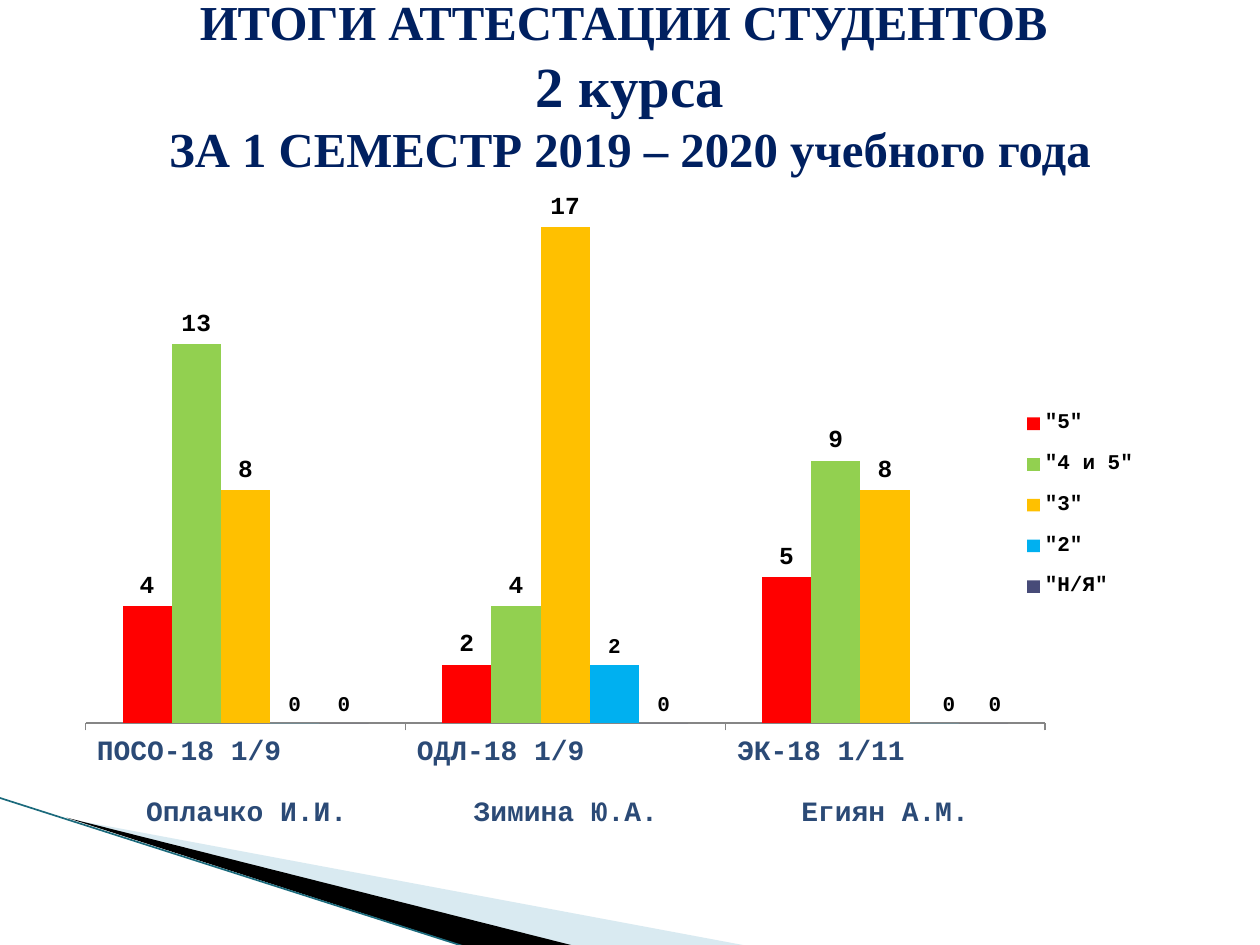
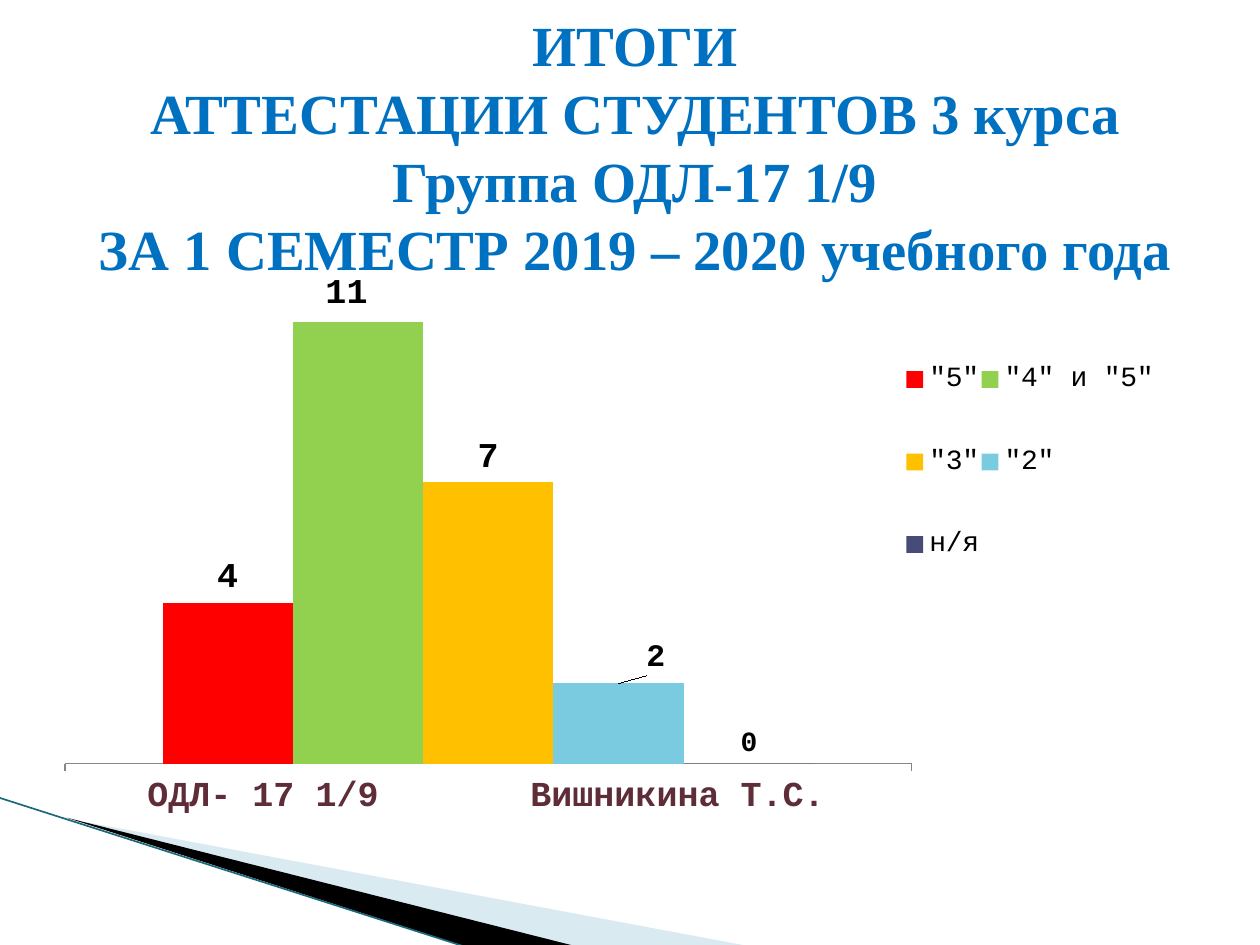
from lxml import etree
from pptx import Presentation
from pptx import util as u
from pptx.chart.data import CategoryChartData
from pptx.dml.color import RGBColor
from pptx.enum import chart as ch, shapes, text
from pptx.oxml.ns import qn

HUES = {
    "navy": "002060", "blue": "0070C0", "ink": "000000", "axis": "868686",
    "slate": "2B4A76", "wine": "5E2D37", "pale": "A0CBDC", "teal": "1B6A7C",
    "red": "FF0000", "green": "92D050", "gold": "FFC000", "sky": "00B0F0",
    "aqua": "7ACBE0", "plum": "474B78",
}
SERIF, MONO = "Times New Roman", "Courier New"

# Wedges in the lower left corner: colour, opacity in percent, corners
WEDGES = [
    ("pale", 40, [(0.55, 6.5), (5.95, 7.51), (4.56, 7.51)]),
    ("ink", 100, [(0.53, 6.49), (4.57, 7.51), (3.72, 7.52)]),
]

# series: name, values, colour, label size
# groups: code and teacher under each cluster
# spots: left and middle of the first code and of the first teacher
# nudge: series, point and label offset as shares of the chart
SLIDES = [
    dict(
        box=(0.5, 0, 9, 1.4), hue="navy",
        title=[("ИТОГИ АТТЕСТАЦИИ СТУДЕНТОВ ", 27.9), ("2 курса", 32.4),
               ("ЗА 1 СЕМЕСТР 2019 – 2020 учебного года", 27.9)],
        chart=(0.5, 1.47, 9, 5.2), top=18,
        plot=(0.02, 0.02, 0.846, 0.801), key=(0.837, 0.32, 0.12, 0.337),
        axis=(16, "slate"), legend=(12, True),
        groups=[("ПОСО-18 1/9", "Оплачко И.И."),
                ("ОДЛ-18 1/9", "Зимина Ю.А."),
                ("ЭК-18 1/11", "Егиян А.М.")],
        spots=[(0.77, 5.95), (1.16, 6.43)], steps=(2.54, 2.6),
        series=[('"5"', (4, 2, 5), "red", 14),
                ('"4 и 5"', (13, 4, 9), "green", 14),
                ('"3"', (8, 17, 8), "gold", 14),
                ('"2"', (0, 2, 0), "sky", 12),
                ('"Н/Я"', (0, 0, 0), "plum", 12)],
        nudge=[(3, 2, 0.013, 0), (4, 2, 0.01, 0)],
    ),
    dict(
        box=(0.59, 0.36, 8.9, 1.65), hue="blue",
        title=[("ИТОГИ", 32.4), ("АТТЕСТАЦИИ СТУДЕНТОВ 3 курса", 32.4),
               ("Группа ОДЛ-17 1/9", 32.4),
               ("ЗА 1 СЕМЕСТР 2019 – 2020 учебного года", 32.4)],
        chart=(0.51, 2.18, 8.99, 4.57), top=12.1,
        plot=(0, 0.001, 0.748, 0.848), key=(0.741, 0.061, 0.223, 0.523),
        axis=(20, "wine"), legend=(16, False),
        groups=[("ОДЛ- 17 1/9", "Вишникина Т.С.")],
        spots=[(1.17, 6.29), (4.21, 6.29)], steps=(0, 0),
        series=[('"5"', (4,), "red", 20),
                ('"4" и "5"', (11,), "green", 20),
                ('"3"', (7,), "gold", 20),
                ('"2"', (2,), "aqua", 18),
                ('н/я', (0,), "plum", 16)],
        nudge=[(1, 0, -0.01, -0.005), (3, 0, 0.033, -0.005)],
    ),
]


def style(font, size, hue="ink", bold=False, name=MONO):
    font.size, font.bold, font.name = u.Pt(size), bold, name
    font.color.rgb = RGBColor.from_string(HUES[hue])


def write(para, line, align=text.PP_ALIGN.CENTER, **form):
    """Put one line of text, formatted as style() takes it."""
    para.alignment = align
    para.space_before = u.Pt(0)
    run = para.add_run()
    run.text = line
    style(run.font, **form)


deck = Presentation()
deck.slide_width, deck.slide_height = u.Inches(10), u.Inches(7.5)

for page in SLIDES:
    slide = deck.slides.add_slide(deck.slide_layouts[5])

    # Corner band
    for hue, clear, spots in WEDGES:
        spots = [(u.Inches(x), u.Inches(y)) for x, y in spots]
        form = slide.shapes.build_freeform(*spots[0])
        form.add_line_segments(spots[1:], close=True)
        wedge = form.convert_to_shape()
        wedge.shadow.inherit = False
        wedge.line.fill.background()
        wedge.fill.solid()
        wedge.fill.fore_color.rgb = RGBColor.from_string(HUES[hue])
        if clear < 100:
            tint = wedge._element.spPr.find(".//" + qn("a:srgbClr"))
            etree.SubElement(tint, qn("a:alpha")).set("val", str(clear * 1000))
    edge = slide.shapes.add_connector(
        shapes.MSO_CONNECTOR.STRAIGHT,
        *[u.Inches(n) for n in (-0.01, 6.33, 3.71, 7.52)])
    edge.line.color.rgb = RGBColor.from_string(HUES["teal"])
    edge.line.width = u.Pt(0.95)
    etree.SubElement(edge._element.spPr, qn("a:effectLst"))

    # Title
    title = slide.shapes.title
    title.left, title.top, title.width, title.height = map(u.Inches, page["box"])
    frame = title.text_frame
    frame.word_wrap = True
    frame.auto_size = text.MSO_AUTO_SIZE.NONE
    frame.vertical_anchor = text.MSO_ANCHOR.MIDDLE
    frame.margin_left = frame.margin_right = u.Inches(0.05)
    frame.margin_bottom = u.Inches(0.11)
    for i, (line, size) in enumerate(page["title"]):
        para = frame.add_paragraph() if i else frame.paragraphs[0]
        write(para, line, size=size, hue=page["hue"], bold=True, name=SERIF)

    # Chart
    data = CategoryChartData()
    data.categories = [" ".join(group) for group in page["groups"]]
    for name, marks, *_ in page["series"]:
        data.add_series(name, marks)
    chart = slide.shapes.add_chart(
        ch.XL_CHART_TYPE.COLUMN_CLUSTERED,
        *map(u.Inches, page["chart"]), data).chart
    chart.has_title = False
    style(chart.font, 10)

    plot = chart.plots[0]
    plot.gap_width, plot.overlap = 150, 0
    plot.vary_by_categories = False
    for bars, (_, _, hue, size) in zip(plot.series, page["series"]):
        bars.format.fill.solid()
        bars.format.fill.fore_color.rgb = RGBColor.from_string(HUES[hue])
        tags = bars.data_labels
        tags.show_value = True
        tags.position = ch.XL_LABEL_POSITION.OUTSIDE_END
        style(tags.font, size, bold=True)

    scale = chart.value_axis
    scale.visible = scale.has_major_gridlines = False
    scale.minimum_scale, scale.maximum_scale = 0, page["top"]
    base = chart.category_axis
    base.major_tick_mark = ch.XL_TICK_MARK.OUTSIDE
    base.tick_label_position = ch.XL_TICK_LABEL_POSITION.NONE
    base.format.line.color.rgb = RGBColor.from_string(HUES["axis"])

    chart.has_legend = True
    chart.legend.position = ch.XL_LEGEND_POSITION.RIGHT
    chart.legend.include_in_layout = False
    size, bold = page["legend"]
    style(chart.legend.font, size, bold=bold)

    # Places of plot, legend and shifted labels, as shares of the chart
    modes = [("xMode", "edge"), ("yMode", "edge")]
    places = [
        (chart.element.find(".//" + qn("c:plotArea")), 0,
         [("layoutTarget", "inner"), *modes, *zip("xywh", page["plot"])]),
        (chart.element.find(".//" + qn("c:legend")), 1,
         [*modes, *zip("xywh", page["key"])]),
    ]
    for row, col, *shift in page["nudge"]:
        bars = plot.series[row]
        tag = bars.points[col].data_label
        tag.position = ch.XL_LABEL_POSITION.OUTSIDE_END
        style(tag.font, page["series"][row][3], bold=True)
        places.append((bars._element.find(".//" + qn("c:dLbl")), 1,
                       list(zip("xy", shift))))
    for area, spot, marks in places:
        for old in area.findall(qn("c:layout")):
            area.remove(old)
        place = etree.Element(qn("c:layout"))
        area.insert(spot, place)
        hand = etree.SubElement(place, qn("c:manualLayout"))
        for key, val in marks:
            etree.SubElement(hand, qn("c:" + key)).set("val", str(val))

    # Group codes and teachers under the clusters
    size, hue = page["axis"]
    for i, group in enumerate(page["groups"]):
        for word, (x, y), step in zip(group, page["spots"], page["steps"]):
            note = slide.shapes.add_textbox(
                u.Inches(x + i * step), u.Inches(y - 0.2),
                u.Inches(2.5), u.Inches(0.4)).text_frame
            note.word_wrap = True
            note.vertical_anchor = text.MSO_ANCHOR.MIDDLE
            note.margin_left = note.margin_right = 0
            write(note.paragraphs[0], word, align=text.PP_ALIGN.LEFT,
                  size=size, hue=hue, bold=True)

deck.save("out.pptx")
